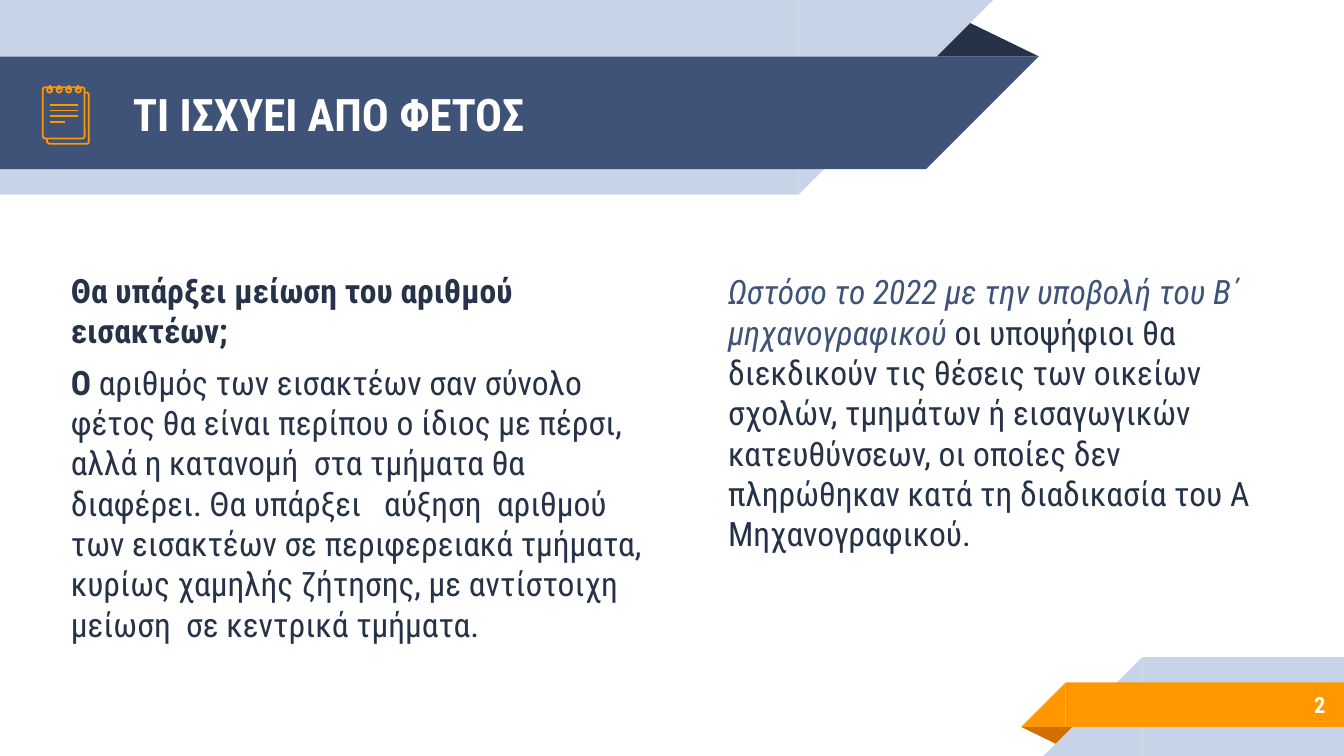
from pptx import Presentation
from pptx.dml.color import RGBColor
from pptx.enum import shapes, text
from pptx.oxml.ns import qn
from pptx.util import Cm, Pt

NAVY = RGBColor(0x26, 0x32, 0x48)
BLUE = RGBColor(0x3F, 0x53, 0x78)
PALE = RGBColor(0xC7, 0xD3, 0xE6)
ORANGE = RGBColor(0xFF, 0x98, 0x00)
DARK_ORANGE = RGBColor(0xD2, 0x6F, 0x00)
WHITE = RGBColor(0xFF, 0xFF, 0xFF)
FONT = "Roboto Condensed"
KIND = shapes.MSO_SHAPE

presentation = Presentation()
presentation.slide_width = Cm(25.4)
presentation.slide_height = Cm(14.29)
slide = presentation.slides.add_slide(presentation.slide_layouts[6])


def add_shape(kind, box, fill=None, rotation=0):
    """Place a filled shape, or an orange outline when no fill is given."""
    shape = slide.shapes.add_shape(kind, *map(Cm, box))
    shape.shadow.inherit = False
    shape.rotation = rotation
    if fill is None:
        shape.fill.background()
        shape.line.color.rgb = ORANGE
        shape.line.width = Pt(0.96)
    else:
        shape.fill.solid()
        shape.fill.fore_color.rgb = fill
        shape.line.fill.background()
    return shape


def add_text(box, paragraphs, anchor=text.MSO_ANCHOR.TOP, **paragraph_format):
    """Each paragraph is a list of (wording, font values) runs."""
    frame = slide.shapes.add_textbox(*map(Cm, box)).text_frame
    frame_format = dict(word_wrap=True, vertical_anchor=anchor, margin_left=Cm(0.25),
                        margin_right=Cm(0.25), margin_top=Cm(0.25), margin_bottom=Cm(0.25))
    for name, value in frame_format.items():
        setattr(frame, name, value)
    for index, runs in enumerate(paragraphs):
        paragraph = frame.add_paragraph() if index else frame.paragraphs[0]
        for name, value in paragraph_format.items():
            setattr(paragraph, name, value)
        for wording, values in runs:
            run = paragraph.add_run()
            run.text = wording
            values = dict(name=FONT, size=Pt(18), color=NAVY) | values
            run.font.color.rgb = values.pop("color")
            for name, value in values.items():
                setattr(run.font, name, value)
    return frame


# Folded ribbons: a bar with a slanted end, the triangle turned towards the open side
fold = add_shape(KIND.ISOSCELES_TRIANGLE, (17.48, 0.36, 2.16, 0.71), NAVY)
fold.adjustments[0] = 0.324
for top, width, height, color in ((0, 15.09, 3.68, PALE), (1.07, 17.5, 2.13, BLUE)):
    add_shape(KIND.RECTANGLE, (0, top, width, height), color)
    add_shape(KIND.RIGHT_TRIANGLE, (width, top, height, height), color, 90)

fold = add_shape(KIND.ISOSCELES_TRIANGLE, (19.3, 13.74, 1.09, 0.36), DARK_ORANGE, 180)
fold.adjustments[0] = 0.324
for left, top, height, color in ((21.59, 12.42, 1.87, PALE), (20.14, 12.9, 0.84, ORANGE)):
    add_shape(KIND.RECTANGLE, (left, top, 25.4 - left, height), color)
    add_shape(KIND.RIGHT_TRIANGLE, (left - height, top, height, height), color, 270)

# Title, two text columns and page number
add_text((2.26, 1.09, 14.6, 2.13),
         [[("ΤΙ ΙΣΧΥΕΙ ΑΠΟ ΦΕΤΟΣ", dict(size=Pt(24), color=WHITE, bold=True))]],
         text.MSO_ANCHOR.MIDDLE)
add_text((13.51, 4.88, 11.07, 6.93), [[
    ("Ωστόσο το 2022 με την υποβολή του Β΄ μηχανογραφικού ", dict(color=BLUE, italic=True)),
    ("οι υποψήφιοι θα διεκδικούν τις θέσεις των οικείων σχολών, τμημάτων ή "
     "εισαγωγικών κατευθύνσεων, οι οποίες δεν πληρώθηκαν κατά τη διαδικασία "
     "του Α Μηχανογραφικού.", {})]])
add_text((21.16, 12.88, 4.14, 0.89),
         [[("2", dict(size=Pt(12), color=WHITE, bold=True))]],
         text.MSO_ANCHOR.MIDDLE, alignment=text.PP_ALIGN.RIGHT)
answer = add_text((0.81, 4.85, 11.73, 8.41), [
    [("Θα υπάρξει μείωση του αριθμού εισακτέων;", dict(bold=True))],
    [("Ο", dict(bold=True)),
     (" αριθμός των εισακτέων σαν σύνολο φέτος θα είναι περίπου ο ίδιος με πέρσι, "
      "αλλά η κατανομή  στα τμήματα θα διαφέρει. Θα υπάρξει   αύξηση  αριθμού των "
      "εισακτέων σε περιφερειακά τμήματα, κυρίως χαμηλής ζήτησης, με αντίστοιχη "
      "μείωση  σε κεντρικά τμήματα.", {})]], space_before=Pt(6))
for paragraph in answer.paragraphs:
    paragraph._p.get_or_add_pPr().set("marL", str(Cm(0.28)))

# Notepad icon: back sheet, front sheet, rings, then text lines and ring pins
corners = [(0.89, 2.62), (0.89, 2.69), (0.94, 2.72), (1.65, 2.72),
           (1.68, 2.69), (1.68, 1.78), (1.65, 1.75), (1.6, 1.75)]
points = [(Cm(x), Cm(y)) for x, y in corners]
builder = slide.shapes.build_freeform(*points[0])
builder.add_line_segments(points[1:], close=False)
back_sheet = builder.convert_to_shape()
back_sheet.shadow.inherit = False
back_sheet.fill.background()
back_sheet.line.color.rgb = ORANGE
back_sheet.line.width = Pt(0.96)

front_sheet = add_shape(KIND.ROUNDED_RECTANGLE, (0.81, 1.65, 0.79, 0.97))
front_sheet.adjustments[0] = 0.06

ring_centers = [0.94 + 0.18 * index for index in range(4)]
for x in ring_centers:
    add_shape(KIND.OVAL, (x - 0.05, 1.65, 0.1, 0.1))

strokes = [(0.94, 1.98 + 0.11 * row, 1.22 if row == 3 else 1.47, 1.98 + 0.11 * row)
           for row in range(4)]
strokes += [(x, 1.6, x, 1.7) for x in ring_centers]
for stroke in strokes:
    connector = slide.shapes.add_connector(shapes.MSO_CONNECTOR.STRAIGHT, *map(Cm, stroke))
    connector.line.color.rgb = ORANGE
    connector.line.width = Pt(0.96)
    properties = connector._element.spPr
    properties.append(properties.makeelement(qn("a:effectLst"), {}))

presentation.save("out.pptx")
